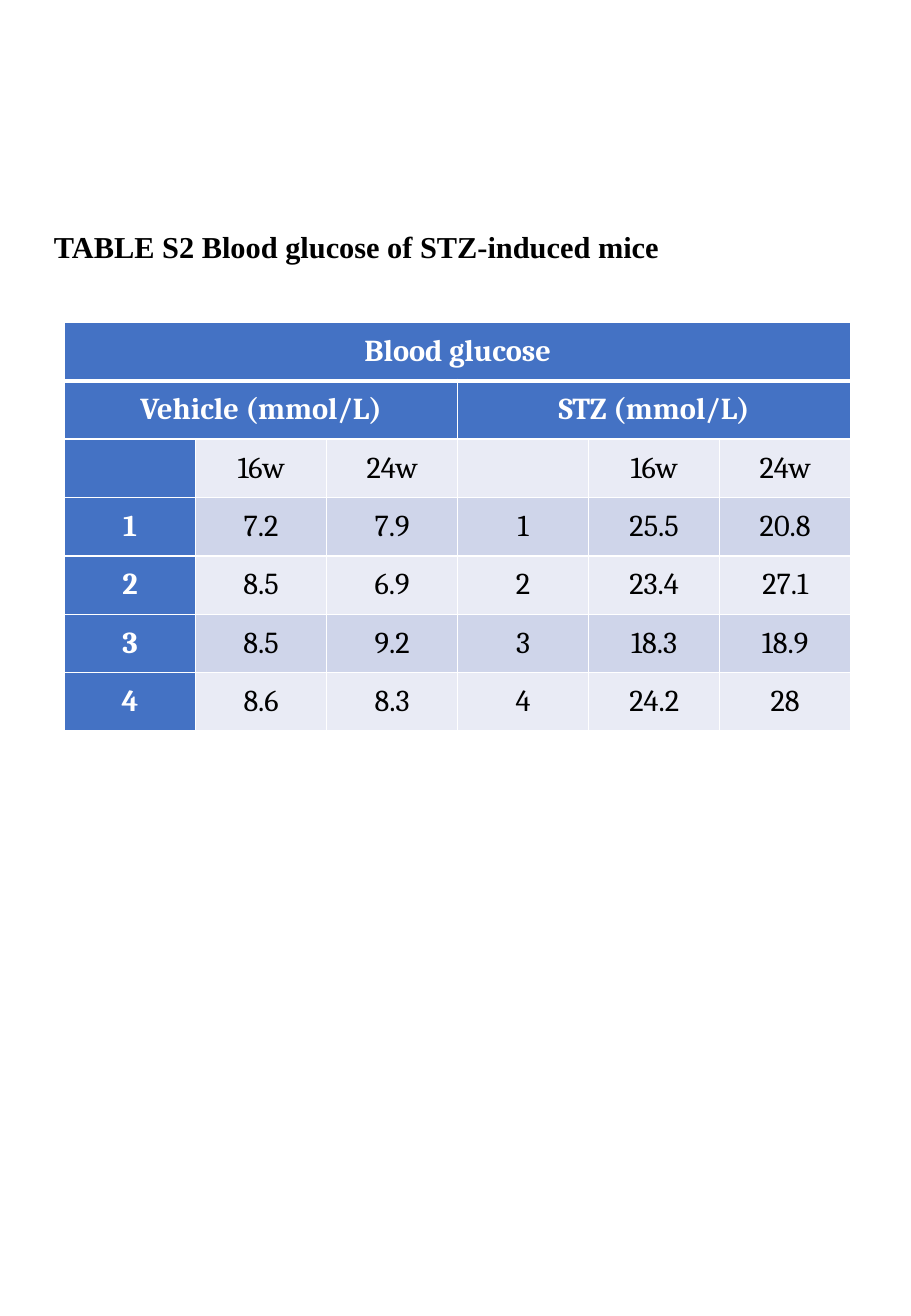
from lxml.etree import SubElement
from pptx import Presentation
from pptx.dml.color import RGBColor
from pptx.enum.text import MSO_ANCHOR, MSO_AUTO_SIZE, PP_ALIGN
from pptx.oxml.ns import qn
from pptx.util import Cm, Pt

WHITE, BLACK, BLUE = "FFFFFF", "000000", "4472C4"
BANDS = ["E9EBF5", "CFD5EA"]
HEADER_ROWS = 2
ROWS = [
    ["Blood glucose", "", "", "", "", ""],
    ["Vehicle (mmol/L)", "", "", "STZ (mmol/L)", "", ""],
    ["", "16w", "24w", "", "16w", "24w"],
    ["1", "7.2", "7.9", "1", "25.5", "20.8"],
    ["2", "8.5", "6.9", "2", "23.4", "27.1"],
    ["3", "8.5", "9.2", "3", "18.3", "18.9"],
    ["4", "8.6", "8.3", "4", "24.2", "28"],
]
MERGES = [(0, 0, 5), (1, 0, 2), (1, 3, 5)]


def color(code):
    return RGBColor.from_string(code)


class GlucosePage:
    """Holds the text style and the slide, and draws each element on it."""

    size = Pt(18)

    def __init__(self, slide):
        self.slide = slide

    def add_text(self, paragraph, text, font, ink, bold):
        run = paragraph.add_run()
        run.text = text
        run.font.name = font
        run.font.size = self.size
        run.font.bold = bold
        run.font.color.rgb = color(ink)

    def caption(self, text, left, top, width, height):
        frame = self.slide.shapes.add_textbox(left, top, width, height).text_frame
        frame.word_wrap = True
        frame.auto_size = MSO_AUTO_SIZE.SHAPE_TO_FIT_TEXT
        self.add_text(frame.paragraphs[0], text, "Times New Roman", BLACK, True)

    def borders(self, cell, top, bottom):
        properties = cell._tc.get_or_add_tcPr()
        for side, points in (("L", 1), ("R", 1), ("T", top), ("B", bottom)):
            line = SubElement(properties, qn(f"a:ln{side}"), w=str(Pt(points)))
            fill = SubElement(line, qn("a:solidFill"))
            SubElement(fill, qn("a:srgbClr"), val=WHITE)

    def cell(self, cell, text, row, column):
        heading = row < HEADER_ROWS or column == 0
        self.borders(cell, 3 if row == 1 else 1, 3 if row == 0 else 1)
        cell.fill.solid()
        cell.fill.fore_color.rgb = color(BLUE if heading else BANDS[row % 2])
        cell.vertical_anchor = MSO_ANCHOR.MIDDLE
        cell.margin_left = cell.margin_right = Cm(0.18)
        cell.margin_top = cell.margin_bottom = 0
        paragraph = cell.text_frame.paragraphs[0]
        paragraph.alignment = PP_ALIGN.CENTER
        if text:
            self.add_text(paragraph, text, "Cambria", WHITE if heading else BLACK, heading)

    def table(self, rows, merges, left, top, column_width, row_height):
        row_count, column_count = len(rows), len(rows[0])
        table = self.slide.shapes.add_table(
            row_count, column_count, left, top,
            column_width * column_count, row_height * row_count).table
        for row, first, last in merges:
            table.cell(row, first).merge(table.cell(row, last))
        for row, texts in enumerate(rows):
            for column, text in enumerate(texts):
                self.cell(table.cell(row, column), text, row, column)


def main():
    deck = Presentation()
    deck.slide_width, deck.slide_height = Cm(19.05), Cm(27.51)
    page = GlucosePage(deck.slides.add_slide(deck.slide_layouts[6]))
    page.table(ROWS, MERGES, Cm(1.35), Cm(6.74), Cm(2.74), Cm(1.22))
    page.caption("TABLE S2 Blood glucose of STZ-induced mice",
                 Cm(0.88), Cm(4.65), Cm(14.25), Cm(1.02))
    deck.save("out.pptx")


if __name__ == "__main__":
    main()
